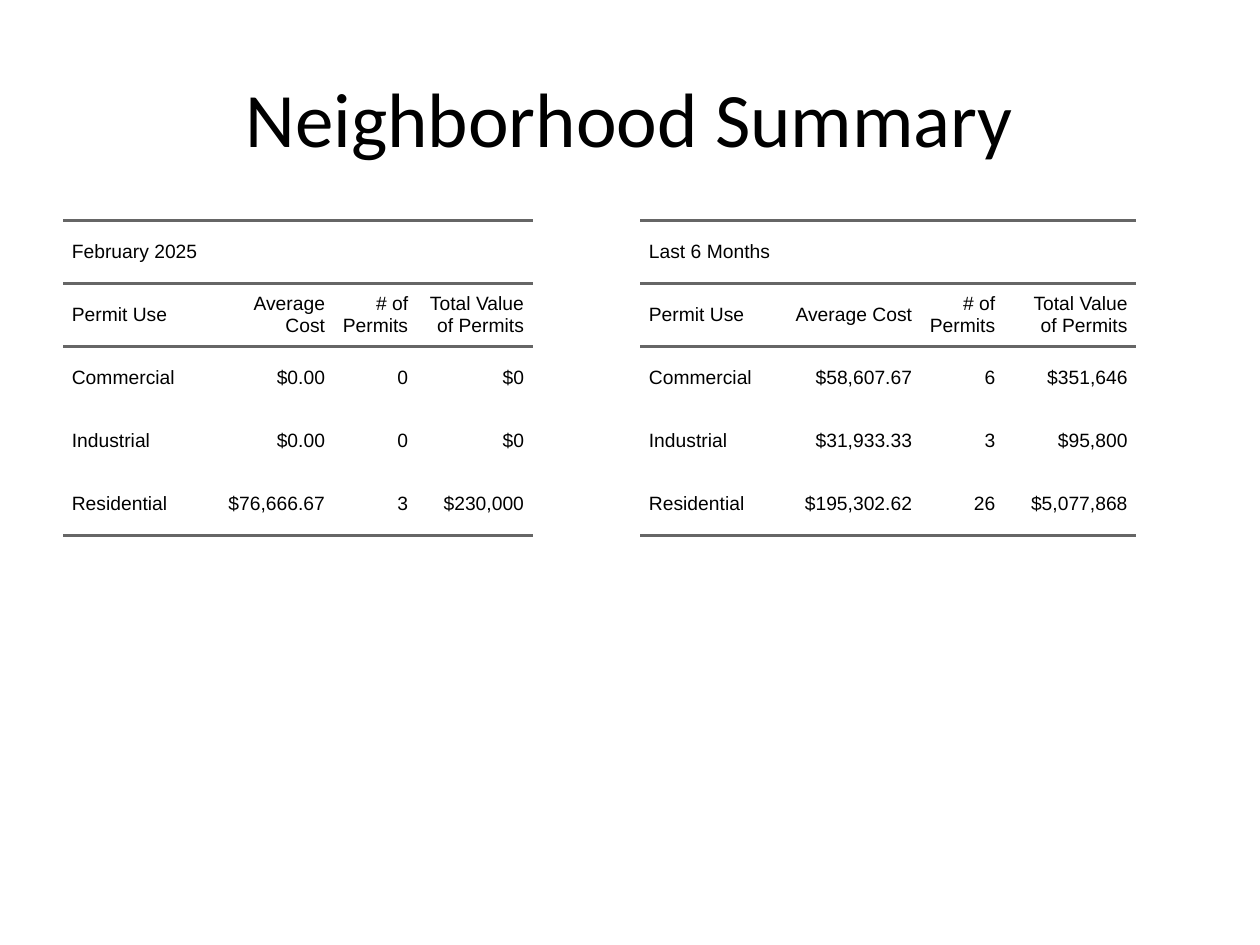
from lxml.etree import SubElement
from pptx import Presentation
from pptx.dml.color import RGBColor
from pptx.enum.text import MSO_ANCHOR, PP_ALIGN
from pptx.oxml.ns import qn
from pptx.util import Inches, Pt

BLACK = RGBColor(0x00, 0x00, 0x00)
RULE_GRAY = RGBColor(0x66, 0x66, 0x66)
PADDING = Inches(0.07)
ROW_HEIGHT = Inches(0.5)
HEADINGS = ("Permit Use", "Average Cost", "# of Permits", "Total Value of Permits")

FEBRUARY = (
    ("Commercial", "$0.00", "0", "$0"),
    ("Industrial", "$0.00", "0", "$0"),
    ("Residential", "$76,666.67", "3", "$230,000"),
)
SIX_MONTHS = (
    ("Commercial", "$58,607.67", "6", "$351,646"),
    ("Industrial", "$31,933.33", "3", "$95,800"),
    ("Residential", "$195,302.62", "26", "$5,077,868"),
)


def style_run(run, font_name, size):
    """Give a run its font, size and black colour."""
    run.font.name = font_name
    run.font.size = Pt(size)
    run.font.color.rgb = BLACK


def rule_cell(cell, ruled_sides):
    """Draw gray rules on the given sides and clear the other sides and the fill."""
    properties = cell._tc.get_or_add_tcPr()
    for side in "LRTB":
        border = SubElement(properties, qn(f"a:ln{side}"), w=str(Pt(1.5)))
        if side in ruled_sides:
            fill = SubElement(border, qn("a:solidFill"))
            SubElement(fill, qn("a:srgbClr"), val=str(RULE_GRAY))
        else:
            SubElement(border, qn("a:noFill"))
    cell.fill.background()


def fill_cell(cell, text, alignment):
    """Write the text of one cell with its spacing and alignment."""
    cell.vertical_anchor = MSO_ANCHOR.MIDDLE
    cell.margin_left = cell.margin_right = 0
    cell.margin_top = cell.margin_bottom = PADDING
    paragraph = cell.text_frame.paragraphs[0]
    paragraph.text = text
    paragraph.alignment = alignment
    paragraph.space_before = paragraph.space_after = Pt(5)
    indents = paragraph._p.get_or_add_pPr()
    for margin in ("marL", "marR"):
        indents.set(margin, str(PADDING))
    indents.set("indent", "0")
    for run in paragraph.runs:
        style_run(run, "Arial", 11)


def add_permit_table(slide, left, top, width, height, period, column_widths, permits):
    """Place the permit table of one period in the given box."""
    rows = ((period, "", "", ""), HEADINGS, *permits)
    frame = slide.shapes.add_table(len(rows), len(HEADINGS), left, top, width, height)
    table = frame.table
    table.first_row = table.horz_banding = False
    for column, column_width in zip(table.columns, column_widths):
        column.width = Inches(column_width)
    for row_index, texts in enumerate(rows):
        table.rows[row_index].height = ROW_HEIGHT
        if row_index < 2:
            ruled_sides = "TB"
        else:
            ruled_sides = {2: "T", len(rows) - 1: "B"}.get(row_index, "")
        for column_index, text in enumerate(texts):
            cell = table.cell(row_index, column_index)
            fill_cell(cell, text, PP_ALIGN.RIGHT if column_index else PP_ALIGN.LEFT)
            rule_cell(cell, ruled_sides)
    table.cell(0, 0).merge(table.cell(0, len(HEADINGS) - 1))
    frame.width, frame.height = width, height


def add_title(slide, left, top, width, height, text):
    """Place the centred slide title in the given box."""
    title_frame = slide.shapes.add_textbox(left, top, width, height).text_frame
    title_frame.word_wrap = True
    title_frame.vertical_anchor = MSO_ANCHOR.MIDDLE
    paragraph = title_frame.paragraphs[0]
    paragraph.text = text
    paragraph.alignment = PP_ALIGN.CENTER
    style_run(paragraph.runs[0], "Calibri", 44)


def main():
    """Build and save the neighborhood summary."""
    presentation = Presentation()
    presentation.slide_width = Inches(10)
    presentation.slide_height = Inches(7.5)
    slide = presentation.slides.add_slide(presentation.slide_layouts[6])
    periods = (
        (0.5, "February 2025", (1.1, 1.05, 0.66, 0.92), FEBRUARY),
        (5.08, "Last 6 Months", (1.1, 1.13, 0.66, 1.05), SIX_MONTHS),
    )
    for left, period, column_widths, permits in periods:
        add_permit_table(slide, Inches(left), Inches(1.75), Inches(4.42), Inches(4.95),
                         period, column_widths, permits)
    add_title(slide, Inches(0.5), Inches(0.3), Inches(9), Inches(1.25),
              "Neighborhood Summary")
    presentation.save("out.pptx")


if __name__ == "__main__":
    main()
